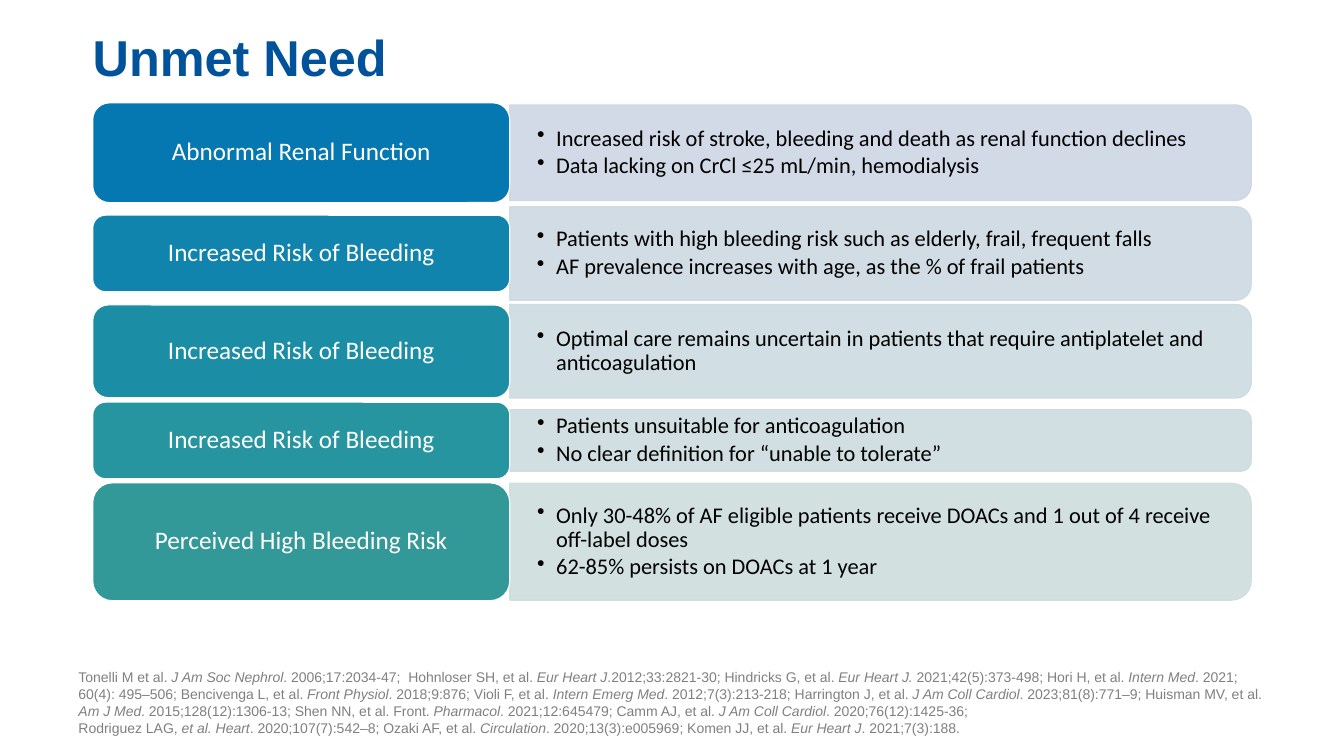
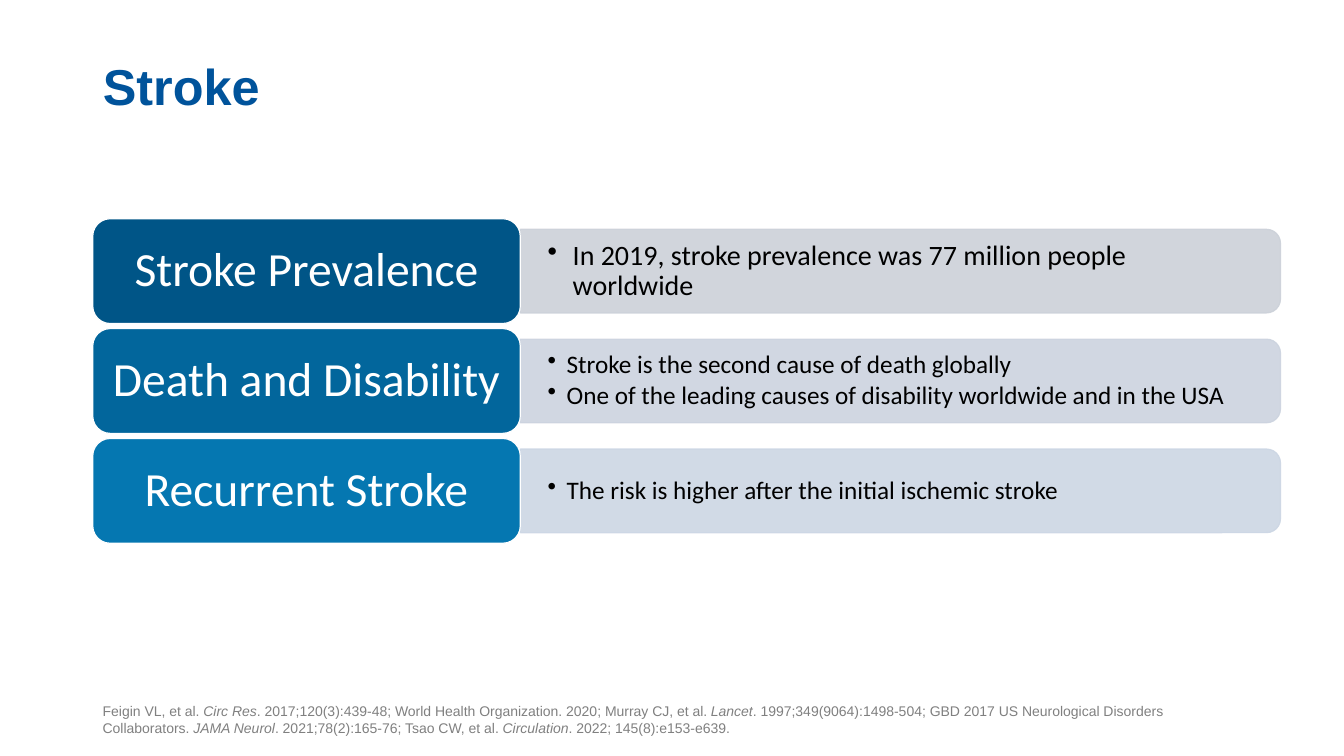
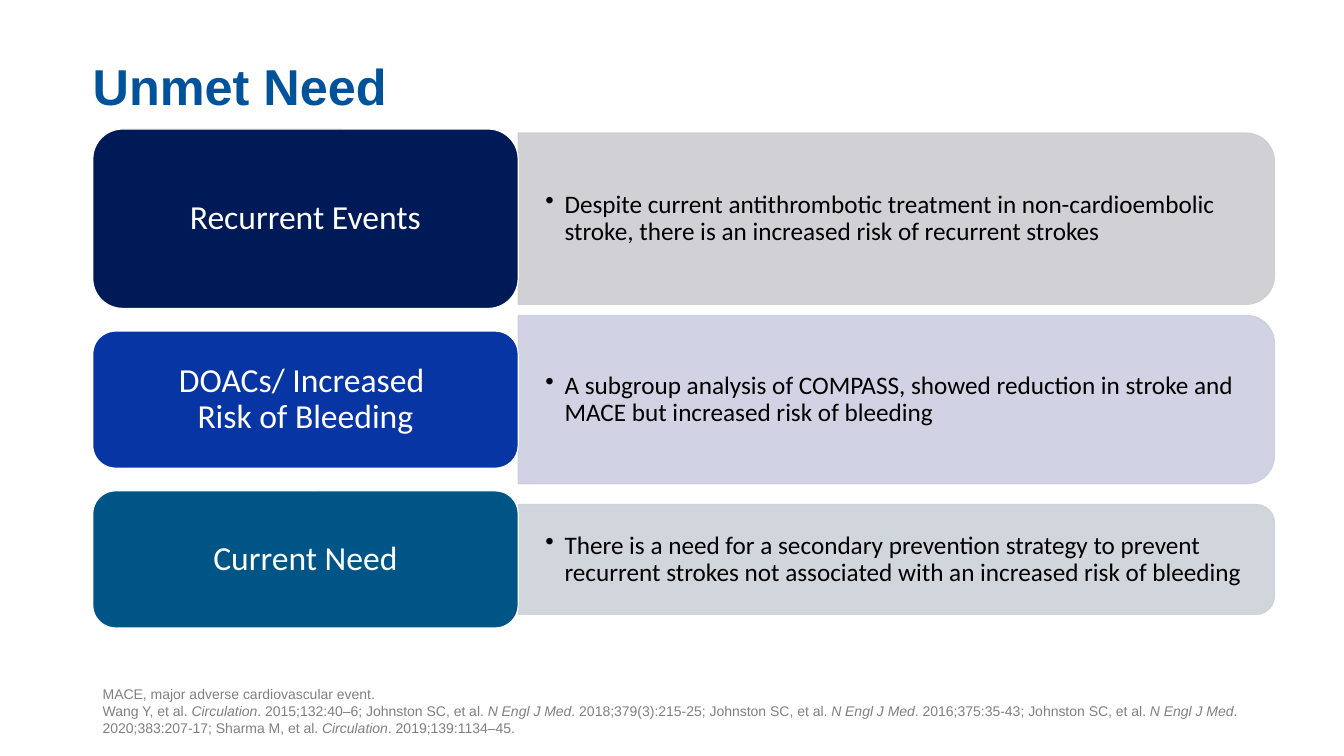
import collections

import lxml.etree
import pptx
import pptx.dml.color
import pptx.enum.shapes
import pptx.enum.text
import pptx.oxml.ns
import pptx.util

Inches = pptx.util.Inches
Pt = pptx.util.Pt
SHAPES = pptx.enum.shapes.MSO_SHAPE
ANCHOR = pptx.enum.text.MSO_ANCHOR
ALIGN = pptx.enum.text.PP_ALIGN

COLOURS = {
    "title": "00539B",
    "footnote": "808080",
    "body": "000000",
    "white": "FFFFFF",
    "night": "001A57",
    "royal": "0736A4",
    "navy": "005587",
    "ocean": "02669C",
    "blue": "0577B1",
    "lagoon": "1084AC",
    "cyan": "1B8EA6",
    "teal": "27959F",
    "green": "339898",
    "night tint": "CCCDD1",
    "royal tint": "CCCEE0",
    "navy tint": "CCD1D9",
    "ocean tint": "CCD3DF",
    "blue tint": "CCD6E4",
    "lagoon tint": "CDD9E2",
    "cyan tint": "CDDBE1",
    "teal tint": "CEDCDF",
    "green tint": "CEDDDD",
}
WIDTH, HEIGHT = 13.33, 7.5
LEFT = 0.92
PILL_SHARE = 0.36
CORNER_SHARE = 0.05
FOOT = 7.35
LINE_WIDTH = 0.85

Row = collections.namedtuple(
    "Row", "label colour pill_height panel_height points point_size")


def rgb(name):
    return pptx.dml.color.RGBColor.from_string(COLOURS[name])


def style(font, face, size, colour):
    font.name = face
    font.size = Pt(size)
    font.color.rgb = rgb(colour)


def set_frame(frame, anchor, side, edge):
    frame.word_wrap = True
    frame.vertical_anchor = anchor
    frame.margin_left = frame.margin_right = Inches(side)
    frame.margin_top = frame.margin_bottom = Inches(edge)


def add_text_box(page, left, top, width, height, anchor, side=0, edge=0):
    box = page.shapes.add_textbox(
        Inches(left), Inches(top), Inches(width), Inches(height))
    set_frame(box.text_frame, anchor, side, edge)
    return box.text_frame


def add_block(page, kind, left, top, width, height, fill, line):
    block = page.shapes.add_shape(
        kind, Inches(left), Inches(top), Inches(width), Inches(height))
    block.shadow.inherit = False
    block.fill.solid()
    block.fill.fore_color.rgb = rgb(fill)
    block.line.color.rgb = rgb(line)
    block.line.width = Pt(LINE_WIDTH)
    return block


def set_opacity(block, percent):
    tag = pptx.oxml.ns.qn("a:srgbClr")
    for colour in block.fill._xPr.iter(tag):
        alpha = lxml.etree.SubElement(colour, pptx.oxml.ns.qn("a:alpha"))
        alpha.set("val", str(percent * 1000))


def add_bullet(para, indent):
    properties = para._p.get_or_add_pPr()
    properties.set("marL", str(Inches(indent)))
    properties.set("indent", str(-Inches(indent)))
    bullet = lxml.etree.SubElement(properties, pptx.oxml.ns.qn("a:buChar"))
    bullet.set("char", "•")


def add_title(page, text, left, bottom):
    frame = add_text_box(page, left, bottom - 0.7, 11.5, 0.7, ANCHOR.BOTTOM)
    frame.text = text
    para = frame.paragraphs[0]
    para.line_spacing = 0.9
    style(para.runs[0].font, "Arial", 36, "title")
    para.runs[0].font.bold = True


def add_footnote(page, lines, left=LEFT, width=11.5):
    frame = add_text_box(
        page, left, FOOT - 0.75, width, 0.75, ANCHOR.BOTTOM, 0.1, 0.05)
    for number, line in enumerate(lines):
        para = frame.add_paragraph() if number else frame.paragraphs[0]
        for position, text in enumerate(line.split("*")):
            if text:
                span = para.add_run()
                span.text = text
                style(span.font, "Arial", 10, "footnote")
                span.font.italic = position % 2 == 1


def add_panel(page, row, left, middle, width):
    height = row.panel_height
    panel = add_block(
        page, SHAPES.ROUND_2_SAME_RECTANGLE,
        left + (width - height) / 2, middle - width / 2, height, width,
        row.colour + " tint", row.colour + " tint")
    panel.rotation = 90
    set_opacity(panel, 90)

    frame = add_text_box(
        page, left, middle - height / 2, width - CORNER_SHARE * height,
        height, ANCHOR.MIDDLE, side=0.27)
    frame.text = "\n".join(row.points)
    for para in frame.paragraphs:
        add_bullet(para, 0.25 if row.point_size == 20 else 0.19)
        para.line_spacing = 0.9
        para.space_after = Pt(0.15 * row.point_size)
        style(para.runs[0].font, "Calibri", row.point_size, "body")


def add_pill(page, row, middle, width, label_size):
    pill = add_block(
        page, SHAPES.ROUNDED_RECTANGLE, LEFT, middle - row.pill_height / 2,
        width, row.pill_height, row.colour, "white")
    set_frame(pill.text_frame, ANCHOR.MIDDLE, 0.07, 0.04)
    pill.text_frame.text = row.label
    para = pill.text_frame.paragraphs[0]
    para.alignment = ALIGN.CENTER
    para.line_spacing = 0.9
    for span in para.runs:
        style(span.font, "Calibri", label_size, "white")


def add_rows(page, rows, top, width, gap, label_size):
    pill_width = PILL_SHARE * width
    for row in rows:
        height = max(row.pill_height, row.panel_height)
        middle = top + height / 2
        add_panel(page, row, LEFT + pill_width, middle, width - pill_width)
        add_pill(page, row, middle, pill_width, label_size)
        top += height + gap


def add_page(deck):
    return deck.slides.add_slide(deck.slide_layouts[6])


def build_renal_and_bleeding(deck):
    page = add_page(deck)
    add_title(page, "Unmet Need", LEFT, 0.87)
    add_footnote(page, [
        "Tonelli M et al. *J Am Soc Nephrol*. 2006;17:2034-47;  Hohnloser SH, "
        "et al. *Eur Heart J*.2012;33:2821-30; Hindricks G, et al. "
        "*Eur Heart J. *2021;42(5):373-498; Hori H, et al. *Intern Med*. 2021; "
        "60(4): 495–506; Bencivenga L, et al. *Front Physiol*. 2018;9:876; "
        "Violi F, et al. *Intern Emerg Med*. 2012;7(3):213-218; Harrington J, "
        "et al. *J Am Coll Cardiol*. 2023;81(8):771–9; Huisman MV, et al. "
        "*Am J Med*. 2015;128(12):1306-13; Shen NN, et al. Front. "
        "*Pharmacol*. 2021;12:645479; Camm AJ, et al. *J Am Coll Cardiol*. "
        "2020;76(12):1425-36;",
        "Rodriguez LAG, *et al. Heart*. 2020;107(7):542–8; Ozaki AF, et al. "
        "*Circulation*. 2020;13(3):e005969; Komen JJ, et al. *Eur Heart J*. "
        "2021;7(3):188.",
    ], left=0.68, width=12.08)
    add_rows(page, [
        Row("Abnormal Renal Function", "blue", 0.99, 0.95, [
            "Increased risk of stroke, bleeding and death as renal function "
            "declines",
            "Data lacking on CrCl ≤25 mL/min, hemodialysis"], 16),
        Row("Increased Risk of Bleeding", "lagoon", 0.76, 0.93, [
            "Patients with high bleeding risk such as elderly, frail, "
            "frequent falls",
            "AF prevalence increases with age, as the % of frail patients"],
            16),
        Row("Increased Risk of Bleeding", "cyan", 0.92, 0.93, [
            "Optimal care remains uncertain in patients that require "
            "antiplatelet and anticoagulation"], 16),
        Row("Increased Risk of Bleeding", "teal", 0.76, 0.61, [
            "Patients unsuitable for anticoagulation",
            "No clear definition for “unable to tolerate”"], 16),
        Row("Perceived High Bleeding Risk", "green", 1.17, 1.16, [
            "Only 30-48% of AF eligible patients receive DOACs and 1 out of "
            "4 receive off-label doses",
            "62-85% persists on DOACs at 1 year"], 16),
    ], top=1.02, width=11.49, gap=0.04, label_size=18)


def build_stroke(deck):
    page = add_page(deck)
    add_title(page, "Stroke", LEFT + 0.1, 1.16)
    add_rows(page, [
        Row("Stroke Prevalence", "navy", 1.04, 0.83, [
            "In 2019, stroke prevalence was 77 million people worldwide"],
            20),
        Row("Death and Disability", "ocean", 1.04, 0.83, [
            "Stroke is the second cause of death globally",
            "One of the leading causes of disability worldwide and in the "
            "USA"], 18),
        Row("Recurrent Stroke", "blue", 1.04, 0.83, [
            "The risk is higher after the initial ischemic stroke"], 18),
    ], top=2.17, width=11.78, gap=0.05, label_size=34)
    add_footnote(page, [
        "Feigin VL, et al. *Circ Res*. 2017;120(3):439-48; World Health "
        "Organization. 2020; Murray CJ, et al. *Lancet*. "
        "1997;349(9064):1498-504; GBD 2017 US Neurological Disorders "
        "Collaborators. *JAMA Neurol*. 2021;78(2):165-76; Tsao CW, et al. "
        "*Circulation*. 2022; 145(8):e153-e639."])


def build_recurrent_events(deck):
    page = add_page(deck)
    add_title(page, "Unmet Need", LEFT, 1.16)
    add_rows(page, [
        Row("Recurrent Events", "night", 1.78, 1.7, [
            "Despite current antithrombotic treatment in non-cardioembolic "
            "stroke, there is an increased risk of recurrent strokes"], 18),
        Row("DOACs/ Increased \vRisk of Bleeding", "royal", 1.36, 1.67, [
            "A subgroup analysis of COMPASS, showed reduction in stroke and "
            "MACE but increased risk of bleeding"], 18),
        Row("Current Need", "navy", 1.36, 1.09, [
            "There is a need for a secondary prevention strategy to prevent "
            "recurrent strokes not associated with an increased risk of "
            "bleeding"], 18),
    ], top=1.28, width=11.72, gap=0.07, label_size=24)
    add_footnote(page, [
        "MACE, major adverse cardiovascular event.",
        "Wang Y, et al. *Circulation*. 2015;132:40–6; Johnston SC, et al. "
        "*N Engl J Med*. 2018;379(3):215-25; Johnston SC, et al. "
        "*N Engl J Med*. 2016;375:35-43; Johnston SC, et al. "
        "*N Engl J Med*. 2020;383:207-17; Sharma M, et al. *Circulation*. "
        "2019;139:1134–45."])


def main():
    deck = pptx.Presentation()
    deck.slide_width = Inches(WIDTH)
    deck.slide_height = Inches(HEIGHT)
    build_renal_and_bleeding(deck)
    build_stroke(deck)
    build_recurrent_events(deck)
    deck.save("out.pptx")


if __name__ == "__main__":
    main()
